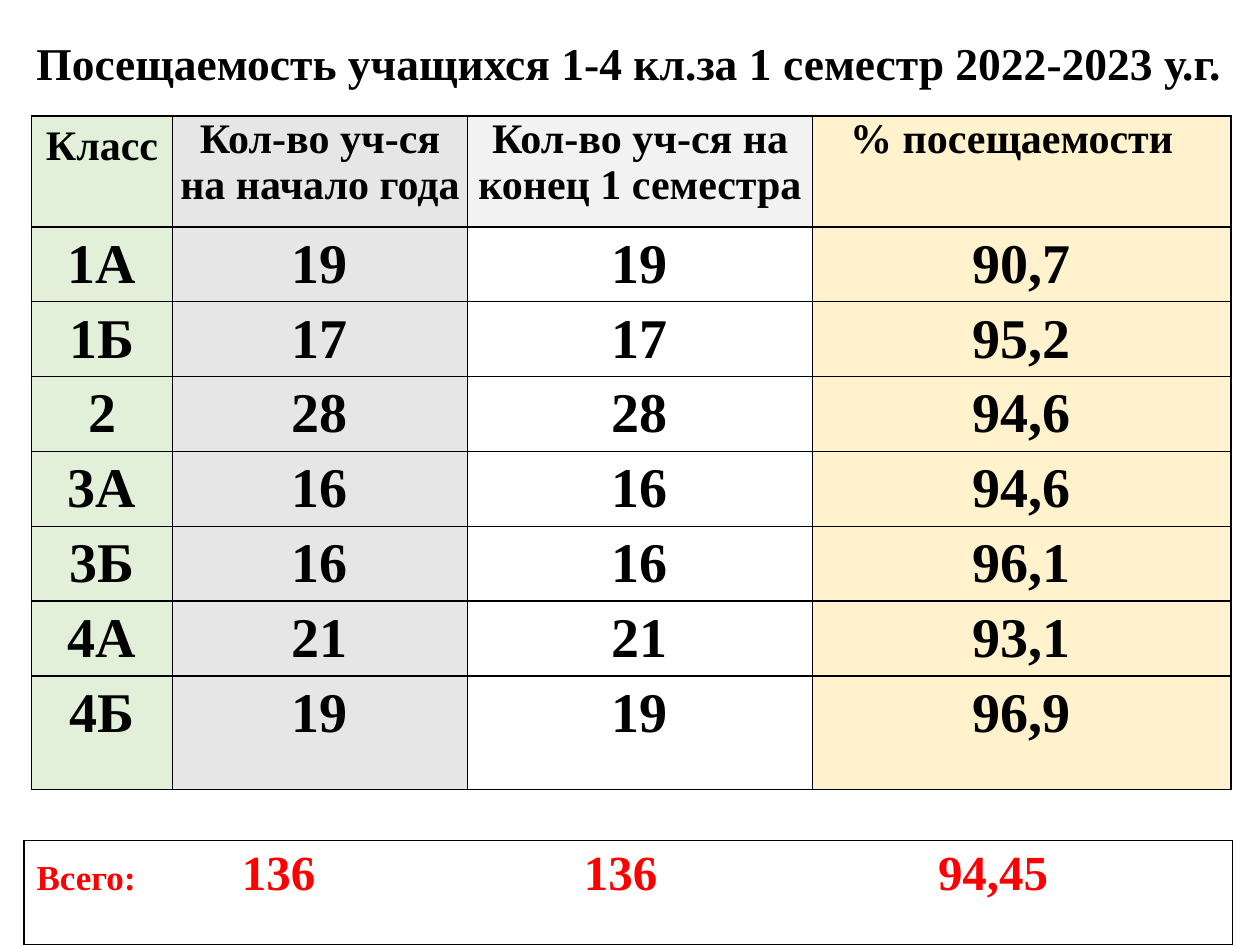
from dataclasses import dataclass
from itertools import product

from lxml.etree import SubElement
from pptx import Presentation
from pptx.dml.color import RGBColor
from pptx.enum.text import MSO_AUTO_SIZE, PP_ALIGN
from pptx.oxml.ns import qn
from pptx.util import Inches, Pt


@dataclass(frozen=True)
class Theme:
    """Colours, font and type sizes of the slide."""
    font: str = "Times New Roman"
    ink: str = "000000"
    total: str = "FF0000"
    column_fills: tuple = ("E2F0D9", "E7E6E6", None, "FFF2CC")
    header_fills: tuple = ("E2F0D9", "E7E6E6", "F2F2F2", "FFF2CC")
    title_size: int = 26
    header_size: int = 24
    body_size: int = 32
    label_size: int = 20
    total_size: int = 28
    border: float = 1


@dataclass(frozen=True)
class Box:
    """A region measured in grid units."""
    left: float
    top: float
    width: float
    height: float

    def place(self):
        """Return the region as slide lengths."""
        return [grid(n) for n in (self.left, self.top, self.width, self.height)]


THEME = Theme()
COLUMNS, ROWS = 100, 75
HEADINGS = ("Класс", "Кол-во уч-ся на начало года",
            "Кол-во уч-ся на конец 1 семестра", "% посещаемости")
ATTENDANCE = (
    ("1А", "19", "19", "90,7"),
    ("1Б", "17", "17", "95,2"),
    ("2", "28", "28", "94,6"),
    ("3А", "16", "16", "94,6"),
    ("3Б", "16", "16", "96,1"),
    ("4А", "21", "21", "93,1"),
    ("4Б", "19", "19", "96,9"),
)
TOTALS = ("136", "136", "94,45")


def grid(units):
    """Convert grid units, a hundredth of the slide width, to a length."""
    return Inches(units * 10 / COLUMNS)


def add_run(paragraph, words, size, color=THEME.ink):
    """Add one bold run in the theme font."""
    run = paragraph.add_run()
    run.text = words
    run.font.name = THEME.font
    run.font.size = Pt(size)
    run.font.bold = True
    run.font.color.rgb = RGBColor.from_string(color)


def style_cell(cell, fill=None):
    """Outline a cell on all sides and set its fill."""
    properties = cell._tc.get_or_add_tcPr()
    for side in ("lnL", "lnR", "lnT", "lnB"):
        line = SubElement(properties, qn(f"a:{side}"), w=str(Pt(THEME.border)))
        solid = SubElement(line, qn("a:solidFill"))
        SubElement(solid, qn("a:srgbClr"), val=THEME.ink)
    if fill:
        cell.fill.solid()
        cell.fill.fore_color.rgb = RGBColor.from_string(fill)
    else:
        cell.fill.background()


def add_plain_table(slide, box, widths, heights):
    """Add an unbanded table with the given column and row shares."""
    table = slide.shapes.add_table(len(heights), len(widths), *box.place()).table
    table.first_row = table.horz_banding = False
    for column, share in zip(table.columns, widths):
        column.width = grid(box.width * share / sum(widths))
    for row, share in zip(table.rows, heights):
        row.height = grid(box.height * share / sum(heights))
    return table


def add_title(slide, box):
    """Place the slide heading."""
    frame = slide.shapes.add_textbox(*box.place()).text_frame
    frame.word_wrap = True
    frame.auto_size = MSO_AUTO_SIZE.SHAPE_TO_FIT_TEXT
    heading = frame.paragraphs[0]
    heading.alignment = PP_ALIGN.CENTER
    add_run(heading, "Посещаемость учащихся 1-4 кл.за 1 семестр 2022-2023 у.г.",
            THEME.title_size)


def add_attendance(slide, box):
    """Place the attendance table by class."""
    records = (HEADINGS, *ATTENDANCE)
    heights = (8.8, *[5.93] * (len(ATTENDANCE) - 1), 9)
    table = add_plain_table(slide, box, (11.2, 23.4, 27.4, 33.2), heights)
    for row, column in product(range(len(records)), range(len(HEADINGS))):
        cell = table.cell(row, column)
        is_header = row == 0
        fills = THEME.header_fills if is_header else THEME.column_fills
        style_cell(cell, fills[column])
        paragraph = cell.text_frame.paragraphs[0]
        paragraph.alignment = PP_ALIGN.CENTER
        if is_header:
            cell.margin_left = cell.margin_right = grid(0.6)
            cell.margin_top = cell.margin_bottom = 0
            paragraph.space_after = Pt(10)
        add_run(paragraph, records[row][column],
                THEME.header_size if is_header else THEME.body_size)
    table.cell(0, 0).text_frame.paragraphs[0].line_spacing = 1.15
    table.cell(0, len(HEADINGS) - 1).margin_right = grid(2.2)


def add_totals(slide, box):
    """Place the totals line with its figures on tab stops."""
    cell = add_plain_table(slide, box, (1,), (1,)).cell(0, 0)
    style_cell(cell)
    paragraph = cell.text_frame.paragraphs[0]
    stops = SubElement(paragraph._p.get_or_add_pPr(), qn("a:tabLst"))
    for share in (0.17, 0.453, 0.746):
        SubElement(stops, qn("a:tab"), pos=str(grid(box.width * share)), algn="l")
    add_run(paragraph, "Всего:", THEME.label_size, THEME.total)
    for figure in TOTALS:
        add_run(paragraph, f"\t{figure}", THEME.total_size, THEME.total)


def main():
    """Build and save the slide."""
    deck = Presentation()
    deck.slide_width, deck.slide_height = grid(COLUMNS), grid(ROWS)
    slide = deck.slides.add_slide(deck.slide_layouts[6])
    add_attendance(slide, Box(2.5, 9.2, 95.2, 53.4))
    add_title(slide, Box(1.2, 2.3, 97.5, 5.4))
    add_totals(slide, Box(1.9, 66.7, 95.9, 8.3))
    deck.save("out.pptx")


if __name__ == "__main__":
    main()
